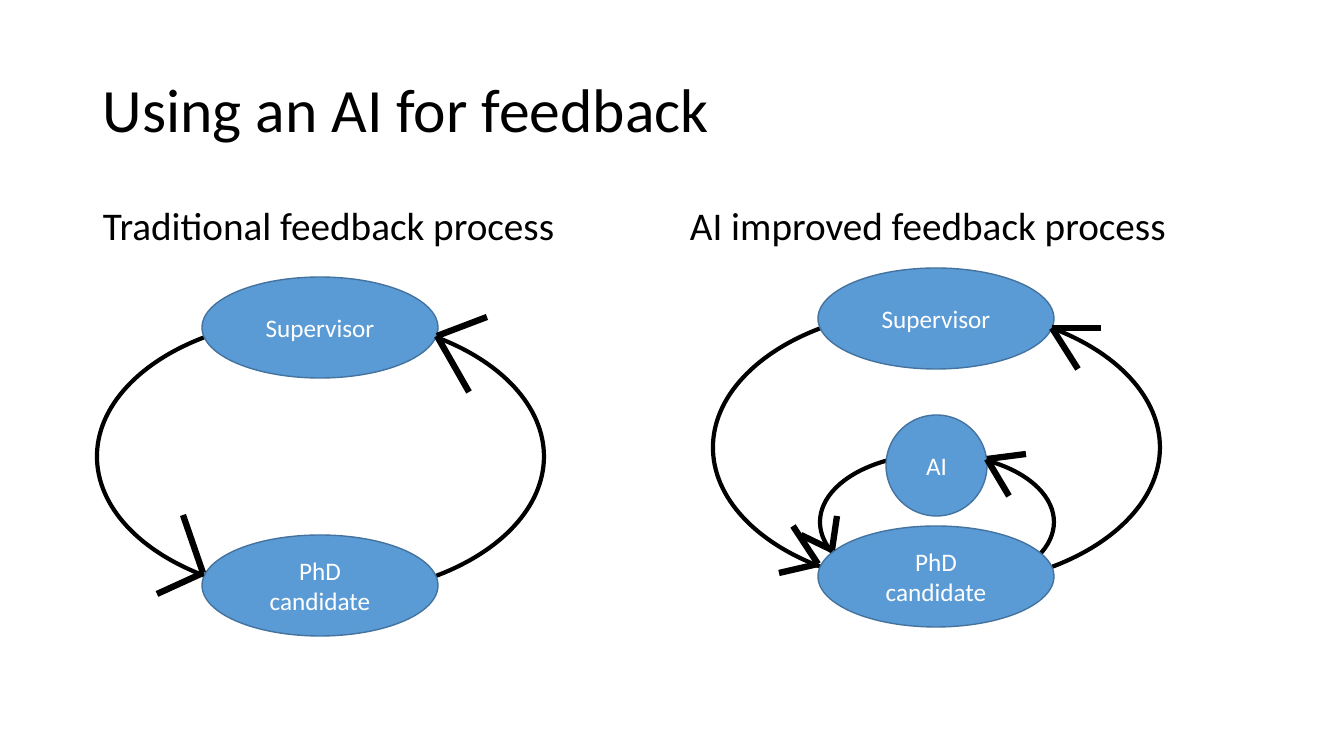
from pptx import Presentation
from pptx.dml.color import RGBColor
from pptx.enum.shapes import MSO_CONNECTOR as CONNECTOR, MSO_SHAPE as SHAPE
from pptx.enum.text import MSO_ANCHOR as ANCHOR, PP_ALIGN as ALIGN
from pptx.oxml.ns import qn
from pptx.util import Pt
from lxml.etree import SubElement

EMU_PER_PX = 12192000 / 1344
FONT = "Calibri"
BLACK = RGBColor(0x00, 0x00, 0x00)
WHITE = RGBColor(0xFF, 0xFF, 0xFF)
BLUE = RGBColor(0x5B, 0x9B, 0xD5)
DARK_BLUE = RGBColor(0x43, 0x73, 0x9E)


def px(*lengths):
    return [round(length * EMU_PER_PX) for length in lengths]


def add_run(paragraph, words, size, color):
    run = paragraph.add_run()
    run.text = words
    run.font.name = FONT
    run.font.size = Pt(size)
    run.font.color.rgb = color


def add_text(slide, box, words, size, anchor=ANCHOR.TOP, space_before=0):
    frame = slide.shapes.add_textbox(*px(*box)).text_frame
    frame.word_wrap = True
    frame.vertical_anchor = anchor
    paragraph = frame.paragraphs[0]
    paragraph.line_spacing = 0.9
    paragraph.space_before = Pt(space_before)
    add_run(paragraph, words, size, BLACK)


def add_ellipse(slide, box, line_color, line_width):
    ellipse = slide.shapes.add_shape(SHAPE.OVAL, *px(*box))
    ellipse.shadow.inherit = False
    ellipse.line.color.rgb = line_color
    ellipse.line.width = Pt(line_width)
    return ellipse


def add_loop(slide, box):
    add_ellipse(slide, box, BLACK, 3).fill.background()


def add_actor(slide, box, words):
    actor = add_ellipse(slide, box, DARK_BLUE, 1)
    actor.fill.solid()
    actor.fill.fore_color.rgb = BLUE
    frame = actor.text_frame
    frame.word_wrap = True
    frame.vertical_anchor = ANCHOR.MIDDLE
    paragraph = frame.paragraphs[0]
    paragraph.alignment = ALIGN.CENTER
    add_run(paragraph, words, 18, WHITE)


def add_arrowhead(slide, tip, *barb_ends):
    for end in barb_ends:
        barb = slide.shapes.add_connector(CONNECTOR.STRAIGHT, *px(*tip, *end))
        barb.line.color.rgb = BLACK
        barb.line.width = Pt(4.5)
        SubElement(barb._element.spPr, qn("a:effectLst"))


def add_feedback_cycle(slide, left, top):
    add_loop(slide, (left, top, 447, 279))
    add_actor(slide, (left + 105, top - 40, 236, 101), "Supervisor")
    add_actor(slide, (left + 105, top + 218, 236, 101), "PhD candidate")


def main():
    deck = Presentation()
    deck.slide_width, deck.slide_height = px(1344, 756)
    slide = deck.slides.add_slide(deck.slide_layouts[6])

    add_text(slide, (93, 40, 1159, 146), "Using an AI for feedback", 44, ANCHOR.MIDDLE)
    for left, heading in (
        (93, "Traditional feedback process"),
        (680, "AI improved feedback process"),
    ):
        add_text(slide, (left, 202, 572, 480), heading, 28, space_before=10)

    add_feedback_cycle(slide, 97, 317)
    add_arrowhead(slide, (203, 573), (183, 515), (157, 594))
    add_arrowhead(slide, (437, 336), (487, 317), (469, 392))

    add_loop(slide, (820, 454, 234, 136))
    add_feedback_cycle(slide, 713, 308)
    add_arrowhead(slide, (818, 564), (793, 526), (779, 573))
    add_arrowhead(slide, (1052, 328), (1101, 328), (1078, 369))

    add_actor(slide, (886, 415, 101, 101), "AI")
    add_arrowhead(slide, (987, 459), (1026, 454), (1009, 496))
    add_arrowhead(slide, (832, 550), (837, 516), (801, 535))

    deck.save("out.pptx")


if __name__ == "__main__":
    main()
